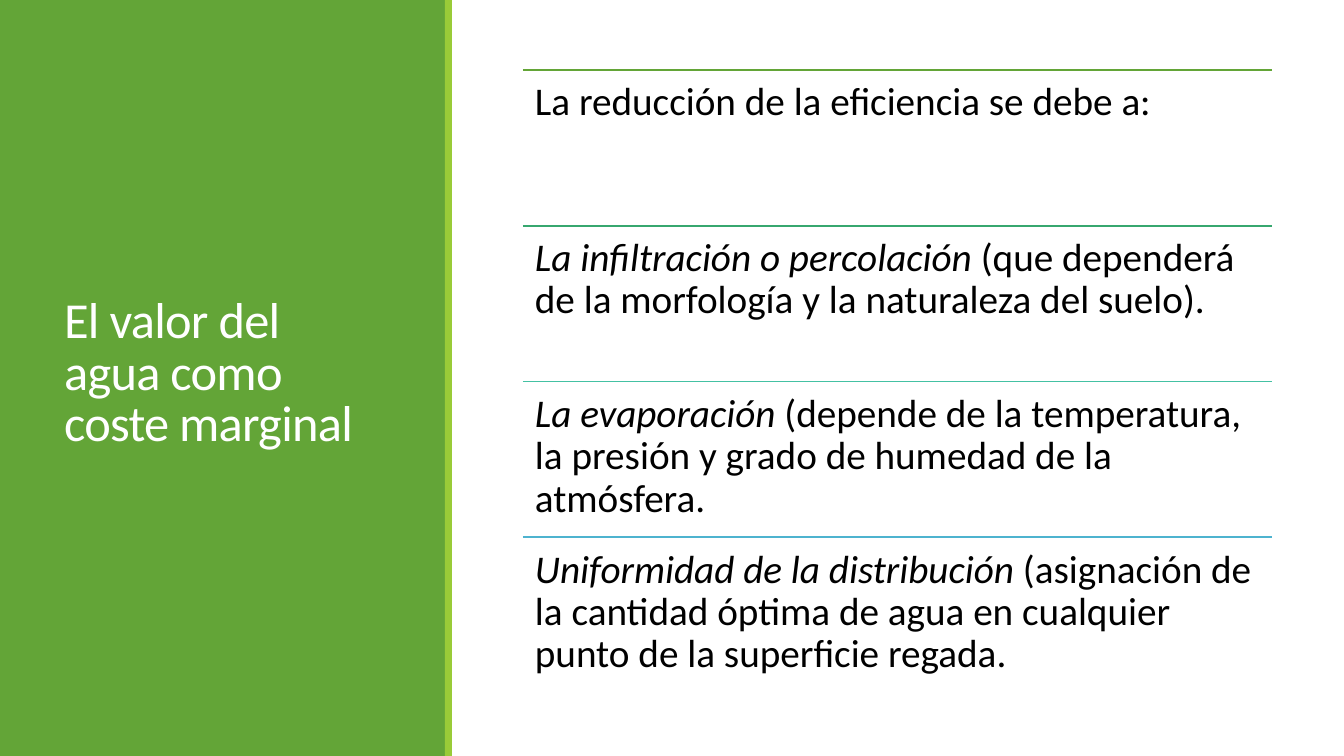
"""Build the slide on the value of water as a marginal cost."""
from pptx import Presentation
from pptx.dml.color import RGBColor
from pptx.enum.shapes import MSO_CONNECTOR, MSO_SHAPE
from pptx.enum.text import MSO_ANCHOR, MSO_AUTO_SIZE, PP_ALIGN
from pptx.oxml.ns import qn
from pptx.util import Pt
from lxml.etree import SubElement

WHITE = RGBColor(0xFF, 0xFF, 0xFF)
BLACK = RGBColor(0x00, 0x00, 0x00)
GREEN = RGBColor(0x63, 0xA5, 0x37)
LIME = RGBColor(0x99, 0xCB, 0x38)
EMERALD = RGBColor(0x37, 0xA7, 0x6F)
TEAL = RGBColor(0x44, 0xC1, 0xA3)
SKY = RGBColor(0x4E, 0xB3, 0xCF)

TITLE = "El valor del agua como coste marginal"
CAUSES = [
    (GREEN, "", "La reducción de la eficiencia se debe a:"),
    (EMERALD, "La infiltración o percolación ",
     "(que dependerá de la morfología y la naturaleza del suelo)."),
    (TEAL, "La evaporación ",
     "(depende de la temperatura, la presión y grado de humedad de la atmósfera."),
    (SKY, "Uniformidad de la distribución ",
     "(asignación de la cantidad óptima de agua en cualquier punto de la superficie regada."),
]
PANELS = [(0, 446, GREEN), (445, 7, LIME)]

FONT = "Calibri"
SLIDE_WIDTH, SLIDE_HEIGHT = 1344, 756
TITLE_BOX = (54, 57, 340, 636)
LIST_LEFT, LIST_TOP, LIST_WIDTH, LIST_HEIGHT = 523, 70, 749, 623
INSET = 12


def px(length):
    return round(length * 914400 / 100.8)


def format_paragraph(para, size, color, line_spacing, space_after):
    para.alignment = PP_ALIGN.LEFT
    para.line_spacing = line_spacing
    para.space_before = Pt(0)
    para.space_after = Pt(space_after)
    para.font.name = FONT
    para.font.size = Pt(size)
    para.font.color.rgb = color


def add_panel(page, left, width, color):
    panel = page.shapes.add_shape(
        MSO_SHAPE.RECTANGLE, px(left), 0, px(width), px(SLIDE_HEIGHT))
    panel.shadow.inherit = False
    panel.fill.solid()
    panel.fill.fore_color.rgb = color
    panel.line.fill.background()
    page.shapes.title.element.addprevious(panel.element)


def place_title(page):
    title = page.shapes.title
    title.left, title.top, title.width, title.height = map(px, TITLE_BOX)
    frame = title.text_frame
    frame.text = TITLE
    frame.word_wrap = True
    frame.auto_size = MSO_AUTO_SIZE.NONE
    frame.vertical_anchor = MSO_ANCHOR.MIDDLE
    para = frame.paragraphs[0]
    format_paragraph(para, 36, WHITE, 0.85, 6)
    para.runs[0].font._element.set("spc", "-50")


def add_cause(page, top, height, color, term, detail):
    rule = page.shapes.add_connector(
        MSO_CONNECTOR.STRAIGHT, px(LIST_LEFT), px(top),
        px(LIST_LEFT + LIST_WIDTH), px(top))
    rule.line.color.rgb = color
    rule.line.width = Pt(1.25)
    SubElement(rule.element.spPr, qn("a:effectLst"))

    box = page.shapes.add_textbox(px(LIST_LEFT), px(top), px(LIST_WIDTH), px(height))
    frame = box.text_frame
    frame.word_wrap = True
    frame.margin_left = frame.margin_right = px(INSET)
    frame.margin_top = frame.margin_bottom = px(INSET)
    para = frame.paragraphs[0]
    format_paragraph(para, 28, BLACK, 0.9, 10)
    if term:
        span = para.add_run()
        span.text = term
        span.font.italic = True
    para.add_run().text = detail


def main():
    deck = Presentation()
    deck.slide_width, deck.slide_height = px(SLIDE_WIDTH), px(SLIDE_HEIGHT)
    page = deck.slides.add_slide(deck.slide_layouts.get_by_name("Title Only"))
    for panel in PANELS:
        add_panel(page, *panel)
    place_title(page)
    row_height = LIST_HEIGHT / len(CAUSES)
    for index, cause in enumerate(CAUSES):
        add_cause(page, LIST_TOP + index * row_height, row_height, *cause)
    deck.save("out.pptx")


if __name__ == "__main__":
    main()
